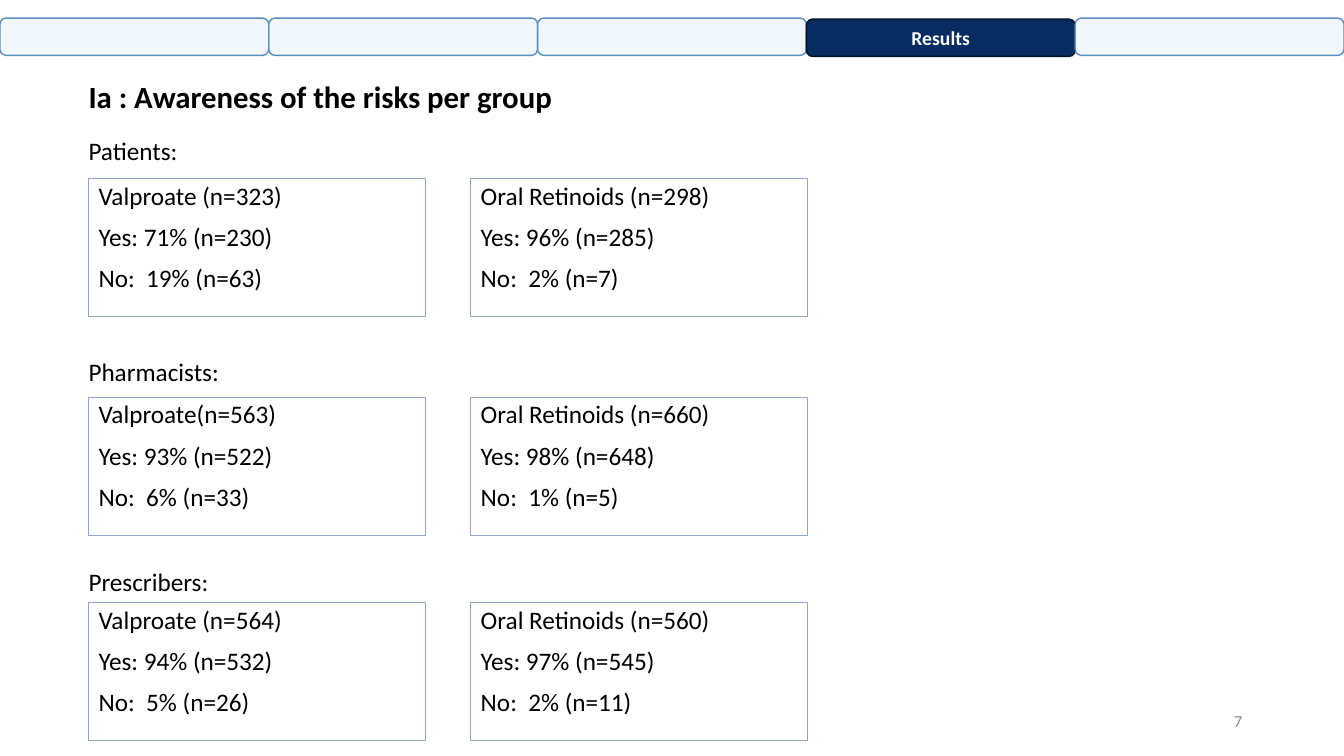
"""Build the slide on awareness of the risks per group."""
import pptx
import pptx.dml.color
import pptx.enum.shapes
import pptx.enum.text
import pptx.oxml
import pptx.oxml.ns
import pptx.util

RGBColor = pptx.dml.color.RGBColor
PP_ALIGN = pptx.enum.text.PP_ALIGN
ANCHOR = pptx.enum.text.MSO_ANCHOR
SHAPE = pptx.enum.shapes.MSO_SHAPE

BLACK = RGBColor(0x00, 0x00, 0x00)
WHITE = RGBColor(0xFF, 0xFF, 0xFF)
GREY = RGBColor(0x8C, 0x8C, 0x8C)
PALE_BLUE = RGBColor(0xBA, 0xD8, 0xF7)
TAB_EDGE = RGBColor(0x5B, 0x8E, 0xBD)
NAVY = RGBColor(0x07, 0x2C, 0x62)
NAVY_EDGE = RGBColor(0x03, 0x12, 0x27)
CARD_EDGE = RGBColor(0x90, 0xA2, 0xCF)

SLIDE_WIDTH, SLIDE_HEIGHT = 13.33, 7.5
MARGIN = 0.78
CARD_INDENT = 0.1
CARD_WIDTH, CARD_HEIGHT = 3.34, 1.37
CARD_STEP = 3.79

SECTION_COUNT = 5
CURRENT_SECTION = 3
GROUPS = [
    ("Patients:", 1.29, 0.48, [
        ["Valproate (n=323)", "Yes: 71% (n=230)", "No:  19% (n=63)"],
        ["Oral Retinoids (n=298)", "Yes: 96% (n=285)", "No:  2% (n=7)"]]),
    ("Pharmacists:", 3.49, 0.45, [
        ["Valproate(n=563)", "Yes: 93% (n=522)", "No:  6% (n=33)"],
        ["Oral Retinoids (n=660)", "Yes: 98% (n=648)", "No:  1% (n=5)"]]),
    ("Prescribers:", 5.57, 0.41, [
        ["Valproate (n=564)", "Yes: 94% (n=532)", "No:  5% (n=26)"],
        ["Oral Retinoids (n=560)", "Yes: 97% (n=545)", "No:  2% (n=11)"]]),
]


def inches(*lengths):
    """Convert lengths in inches to slide units."""
    return [pptx.util.Inches(length) for length in lengths]


def write(shape, lines, size, color=BLACK, bold=False, align=PP_ALIGN.LEFT,
          anchor=ANCHOR.TOP, line_spacing=None, space_before=None):
    """Fill a shape with one paragraph per line."""
    frame = shape.text_frame
    frame.word_wrap = True
    frame.vertical_anchor = anchor
    for number, line in enumerate(lines):
        paragraph = frame.add_paragraph() if number else frame.paragraphs[0]
        paragraph.alignment = align
        paragraph.line_spacing = line_spacing
        paragraph.space_before = space_before
        run = paragraph.add_run()
        run.text = line
        run.font.name = "Calibri"
        run.font.size = pptx.util.Pt(size)
        run.font.bold = bold
        run.font.color.rgb = color


def add_label(slide, box, text, size, **style):
    """Place a single line of text in a box."""
    write(slide.shapes.add_textbox(*inches(*box)), [text], size, **style)


def add_outlined(slide, kind, box, edge, width):
    """Place an unfilled shape with a coloured edge."""
    shape = slide.shapes.add_shape(kind, *inches(*box))
    shape.shadow.inherit = False
    shape.fill.background()
    shape.line.color.rgb = edge
    shape.line.width = pptx.util.Pt(width)
    return shape


def add_navigation(slide, left, top, width, height):
    """Divide a bar into equal section tabs and mark the current one."""
    tab_width = width / SECTION_COUNT
    for column in range(SECTION_COUNT):
        current = column == CURRENT_SECTION
        tab_top = top + 0.01 if current else top
        tab = add_outlined(slide, SHAPE.ROUNDED_RECTANGLE,
                           (left + column * tab_width, tab_top, tab_width, height),
                           NAVY_EDGE if current else TAB_EDGE, 1)
        tab.fill.solid()
        tab.fill.fore_color.rgb = NAVY if current else PALE_BLUE
        if current:
            write(tab, ["Results"], 14, WHITE, True, PP_ALIGN.CENTER, ANCHOR.MIDDLE)
        else:
            tint = tab.fill._xPr.find(".//" + pptx.oxml.ns.qn("a:srgbClr"))
            tint.append(pptx.oxml.parse_xml(
                f'<a:alpha {pptx.oxml.ns.nsdecls("a")} val="20000"/>'))


def add_group(slide, left, top, heading, card_drop, cards):
    """Place a group heading with its row of result cards below."""
    add_label(slide, (left, top, CARD_WIDTH / 2, 0.71), heading, 18)
    for column, lines in enumerate(cards):
        card = add_outlined(slide, SHAPE.RECTANGLE,
                            (left + CARD_INDENT + column * CARD_STEP, top + card_drop,
                             CARD_WIDTH, CARD_HEIGHT), CARD_EDGE, 0.75)
        write(card, lines, 18, line_spacing=0.9, space_before=pptx.util.Pt(10))


def main():
    """Assemble and save the slide."""
    deck = pptx.Presentation()
    deck.slide_width, deck.slide_height = inches(SLIDE_WIDTH, SLIDE_HEIGHT)
    slide = deck.slides.add_slide(deck.slide_layouts[6])
    add_label(slide, (MARGIN, 0.42, 11.5, 1.12), "Ia : Awareness of the risks per group",
              22, bold=True, anchor=ANCHOR.MIDDLE, line_spacing=0.9)
    add_label(slide, (9.42, 6.95, 3, 0.4), "7", 12, color=GREY,
              align=PP_ALIGN.RIGHT, anchor=ANCHOR.MIDDLE)
    for heading, top, card_drop, cards in GROUPS:
        add_group(slide, MARGIN, top, heading, card_drop, cards)
    add_navigation(slide, 0, 0.18, SLIDE_WIDTH, 0.37)
    deck.save("out.pptx")


if __name__ == "__main__":
    main()
